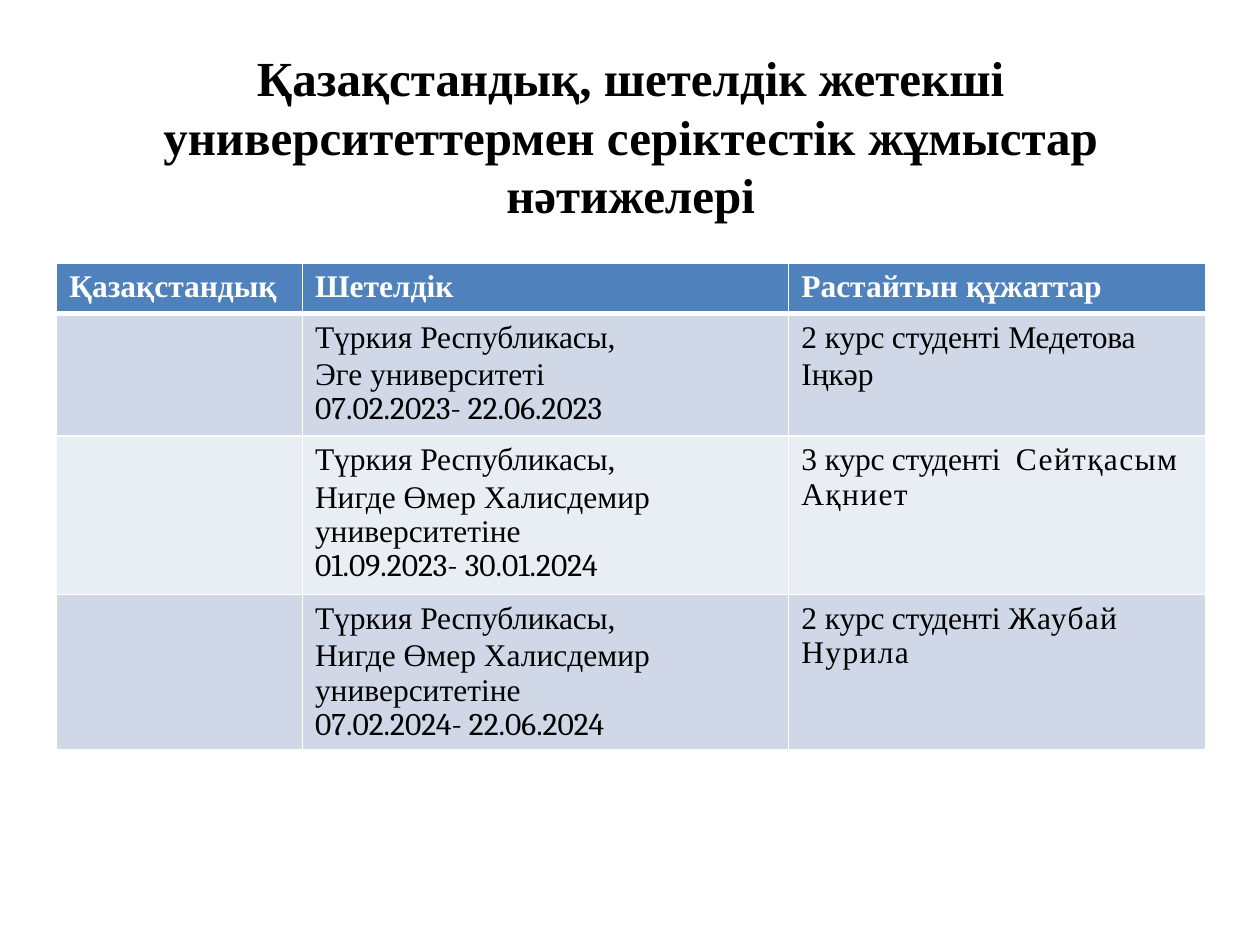
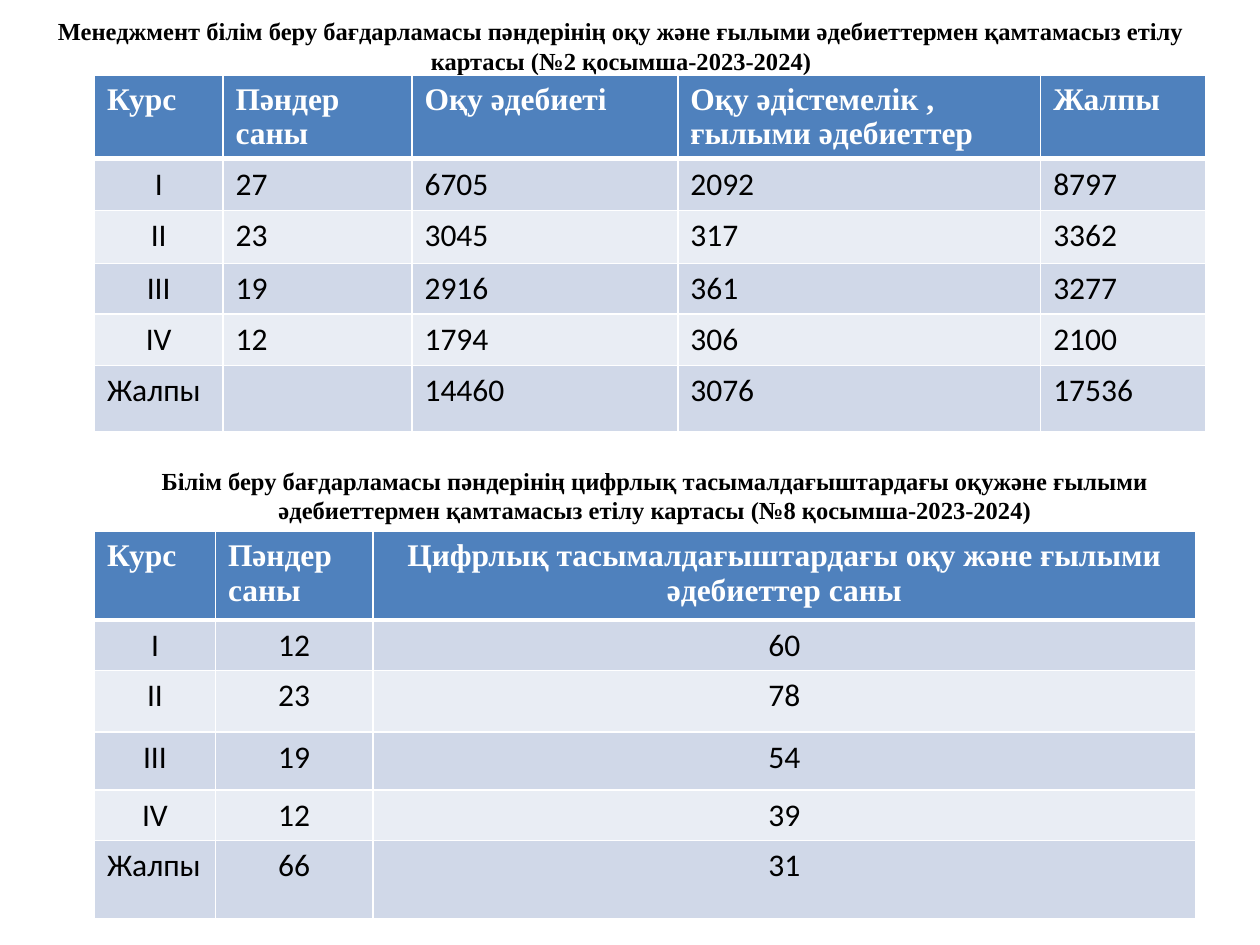
from collections import namedtuple

from lxml.etree import SubElement
from pptx import Presentation
from pptx.dml.color import RGBColor
from pptx.enum.text import PP_ALIGN as Align
from pptx.oxml.ns import qn
from pptx.util import Inches, Pt

COLUMNS, ROWS = 100, 75
HEADER, BAND_DARK, BAND_LIGHT = "4F81BD", "D0D8E8", "E9EDF4"
WHITE, BLACK = "FFFFFF", "000000"
SERIF, SANS, DATES = "Times New Roman", "Calibri", "Cambria"
LEFT, CENTER = Align.LEFT, Align.CENTER
TOTAL = "Жалпы"

Box = namedtuple("Box", "left top width height")
Span = namedtuple("Span", "text spacing font", defaults=(0, None))


def color(hex_string):
    return RGBColor.from_string(hex_string)


def place(deck, box):
    """Turn a box in grid columns and rows into slide lengths."""
    column, row = deck.slide_width / COLUMNS, deck.slide_height / ROWS
    return (round(box.left * column), round(box.top * row),
            round(box.width * column), round(box.height * row))


def write(frame, paras, size=18, font=SERIF, ink=BLACK, bold=False,
          align=LEFT, line=None, gaps=()):
    """Fill a frame; each paragraph is a string or a list of spans."""
    for index, content in enumerate(paras):
        para = frame.paragraphs[0] if index == 0 else frame.add_paragraph()
        para.alignment = align
        if line:
            para.line_spacing = Pt(line)
        if index < len(gaps):
            para.space_before = Pt(gaps[index])
        spans = [Span(content)] if isinstance(content, str) else content
        for part in spans:
            span = para.add_run()
            span.text = part.text
            span.font.size, span.font.bold = Pt(size), bold
            span.font.name = part.font or font
            span.font.color.rgb = color(ink)
            if part.spacing:
                span._r.get_or_add_rPr().set("spc", str(round(part.spacing * 100)))


def add_heading(deck, page, box, paras, inset=(0, 0), **text_format):
    frame = page.shapes.add_textbox(*place(deck, box)).text_frame
    frame.word_wrap = True
    frame.margin_left = frame.margin_right = Inches(inset[0])
    frame.margin_top = frame.margin_bottom = Inches(inset[1])
    write(frame, paras, bold=True, align=CENTER, **text_format)


def paint_cell(cell, fill, top=1, bottom=1):
    """Give a cell white borders and a solid fill."""
    properties = cell._tc.get_or_add_tcPr()
    for side, width in (("L", 1), ("R", 1), ("T", top), ("B", bottom)):
        border = SubElement(properties, qn(f"a:ln{side}"), w=str(Pt(width)))
        solid = SubElement(border, qn("a:solidFill"))
        SubElement(solid, qn("a:srgbClr"), val=WHITE)
    cell.fill.solid()
    cell.fill.fore_color.rgb = color(fill)


def add_banded_table(deck, page, box, widths, heights, rows, head_aligns,
                     body_aligns, body_font=SANS, line=None, head_margin=0.05):
    """Add a table; widths and heights are weights that share out the box."""
    area = place(deck, box)
    table = page.shapes.add_table(len(heights), len(widths), *area).table
    for column, weight in zip(table.columns, widths):
        column.width = round(area[2] * weight / sum(widths))
    for row, weight in zip(table.rows, heights):
        row.height = round(area[3] * weight / sum(heights))
    for row_index, values in enumerate(rows):
        is_head = row_index == 0
        fill = HEADER if is_head else (BAND_LIGHT, BAND_DARK)[row_index % 2]
        aligns = head_aligns if is_head else body_aligns
        for column_index, value in enumerate(values):
            cell = table.cell(row_index, column_index)
            paint_cell(cell, fill, top=3 if row_index == 1 else 1,
                       bottom=3 if is_head else 1)
            if is_head:
                cell.margin_bottom = Inches(head_margin)
            if not value:
                continue
            write(cell.text_frame, [value] if isinstance(value, str) else value,
                  font=SERIF if is_head else body_font,
                  ink=WHITE if is_head else BLACK, bold=is_head,
                  align=LEFT if value == TOTAL else aligns[column_index],
                  line=line, gaps=() if is_head else (0, 1.7))


def exchange(university, dates):
    """Paragraphs for a stay abroad: country, university and dates."""
    return [[Span("Түркия "), Span("Республикасы,", -0.1)],
            university, [Span(dates, font=DATES)]]


def student(year, gap, name, spacing):
    return [[Span(f"{year} "), Span(f"курс студенті{gap}", -0.15),
             Span(name, spacing)]]


def build_partners(deck):
    page = deck.slides.add_slide(deck.slide_layouts[6])
    add_heading(deck, page, Box(12.2, 4.1, 75.7, 14.1),
                ["Қазақстандық, шетелдік жетекші",
                 [Span("университеттермен "), Span("серіктестік ", 0.1),
                  Span("жұмыстар")],
                 "нәтижелері"],
                size=28, line=31.1, gaps=(0, 3, 2))
    nigde = "Нигде Өмер Халисдемир университетіне"
    rows = [
        ("Қазақстандық", "Шетелдік",
         [[Span("Растайтын "), Span("құжаттар", -0.05)]]),
        ("", exchange("Эге университеті", "07.02.2023- 22.06.2023"),
         student(2, " ", "Медетова", -0.1) + ["Іңкәр"]),
        ("", exchange(nigde, "01.09.2023- 30.01.2024"),
         student(3, "  ", "Сейтқасым Ақниет", 0.8)),
        ("", exchange(nigde, "07.02.2024- 22.06.2024"),
         student(2, " ", "Жаубай Нурила", 0.8)),
    ]
    add_banded_table(deck, page, Box(4.5, 20.9, 91.2, 38.6),
                     (1.95, 3.86, 3.31), (0.4, 0.97, 1.26, 1.23), rows,
                     [LEFT] * 3, [LEFT] * 3, body_font=SERIF, line=19.9)


def build_literature(deck):
    page = deck.slides.add_slide(deck.slide_layouts[6])
    add_heading(deck, page, Box(4.3, 1.3, 90, 4.7),
                ["Менеджмент білім беру бағдарламасы пәндерінің оқу және ғылыми "
                 "әдебиеттермен қамтамасыз етілу картасы (№2 қосымша-2023-2024)"],
                size=14)
    printed = [
        ("Курс", "Пәндер саны", "Оқу әдебиеті",
         "Оқу әдістемелік , ғылыми әдебиеттер", "Жалпы"),
        ("I", "27", "6705", "2092", "8797"),
        ("II", "23", "3045", "317", "3362"),
        ("III", "19", "2916", "361", "3277"),
        ("IV", "12", "1794", "306", "2100"),
        (TOTAL, "", "14460", "3076", "17536"),
    ]
    add_banded_table(deck, page, Box(7.5, 6, 88.2, 28.2),
                     (1.02, 1.5, 2.11, 2.88, 1.31),
                     (0.65, 0.41, 0.42, 0.4, 0.41, 0.53), printed,
                     [LEFT] * 5, [CENTER] + [LEFT] * 4, head_margin=0.01)

    add_heading(deck, page, Box(8.3, 36.5, 87.4, 5.7),
                ["Білім беру бағдарламасы пәндерінің цифрлық тасымалдағыштардағы "
                 "оқужәне ғылыми әдебиеттермен қамтамасыз етілу картасы "
                 "(№8 қосымша-2023-2024)"],
                inset=(0.1, 0.05), size=14)
    digital = [
        ("Курс", "Пәндер саны",
         "Цифрлық тасымалдағыштардағы оқу және ғылыми әдебиеттер саны"),
        ("I", "12", "60"),
        ("II", "23", "78"),
        ("III", "19", "54"),
        ("IV", "12", "39"),
        (TOTAL, "66", "31"),
    ]
    add_banded_table(deck, page, Box(7.5, 42.2, 87.4, 30.6),
                     (0.96, 1.25, 6.53), (0.69, 0.4, 0.49, 0.46, 0.4, 0.62),
                     digital, [LEFT, LEFT, CENTER], [CENTER] * 3)


def main():
    deck = Presentation()
    deck.slide_width, deck.slide_height = Inches(10), Inches(7.5)
    build_partners(deck)
    build_literature(deck)
    deck.save("out.pptx")


if __name__ == "__main__":
    main()
